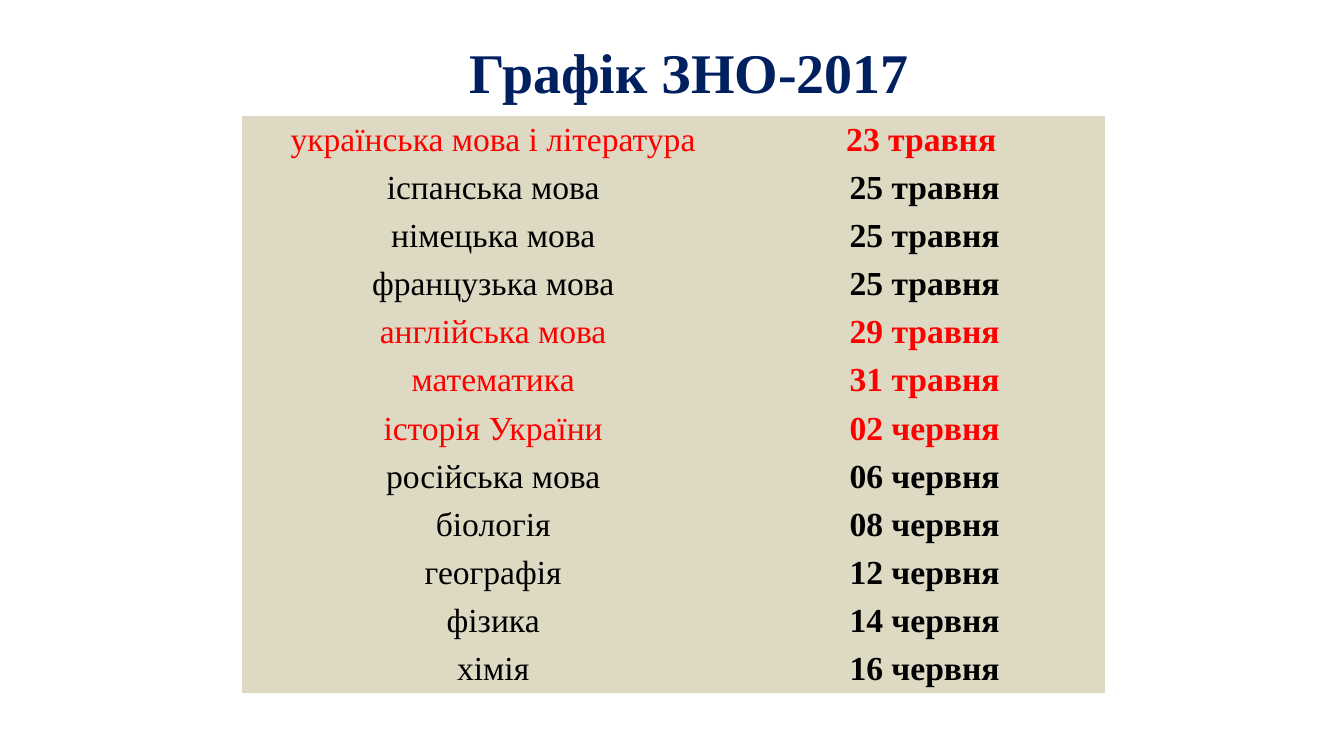
from dataclasses import dataclass

from pptx import Presentation
from pptx.dml.color import RGBColor
from pptx.enum.text import MSO_ANCHOR, PP_ALIGN
from pptx.oxml.ns import qn
from pptx.util import Inches, Pt

CENTER = PP_ALIGN.CENTER
TOP = MSO_ANCHOR.TOP
PLAIN_STYLE = "{2D5ABB26-0587-4C30-8999-92F81FD0307C}"  # no style, no grid


@dataclass(frozen=True)
class Theme:
    font: str = "Times New Roman"
    navy: RGBColor = RGBColor(0x00, 0x20, 0x60)
    red: RGBColor = RGBColor(0xFF, 0x00, 0x00)
    black: RGBColor = RGBColor(0x00, 0x00, 0x00)
    sand: RGBColor = RGBColor(0xDD, 0xD9, 0xC3)
    head: int = 30
    body: int = 18


THEME = Theme()

# Subject, date, marked in red; all dates but the first have a fixed space
EXAMS = [
    ("українська мова і література", "23 травня", True),
    ("іспанська мова", "25 травня", False),
    ("німецька мова", "25 травня", False),
    ("французька мова", "25 травня", False),
    ("англійська мова", "29 травня", True),
    ("математика", "31 травня", True),
    ("історія України", "02 червня", True),
    ("російська мова", "06 червня", False),
    ("біологія", "08 червня", False),
    ("географія", "12 червня", False),
    ("фізика", "14 червня", False),
    ("хімія", "16 червня", False),
]


def write(frame, text, size, color, bold, indent=0.15):
    """Set one centred line with a first-line indent."""
    frame.text = text
    line = frame.paragraphs[0]
    line.alignment = CENTER
    props = line._p.get_or_add_pPr()
    props.set("marL", "0")
    props.set("indent", str(Inches(indent)))
    font = line.runs[0].font
    font.name = THEME.font
    font.size = Pt(size)
    font.bold = bold
    font.color.rgb = color
    return line


def add_title(slide, left, top, width, height):
    box = slide.shapes.add_textbox(
        Inches(left), Inches(top), Inches(width), Inches(height))
    frame = box.text_frame
    frame.word_wrap = True
    frame.vertical_anchor = TOP
    frame.margin_top = Inches(0.05)
    write(frame, "Графік ЗНО-2017", THEME.head, THEME.navy, True)


def fill_cell(cell, text, color, bold, indent):
    cell.fill.solid()
    cell.fill.fore_color.rgb = THEME.sand
    cell.margin_left = cell.margin_right = 0
    cell.margin_top = cell.margin_bottom = 0
    line = write(cell.text_frame, text, THEME.body, color, bold, indent)
    line.line_spacing = 1.15


def add_dates(slide, left, top, width, height):
    frame = slide.shapes.add_table(
        len(EXAMS), 2, Inches(left), Inches(top), Inches(width), Inches(height))
    table = frame.table
    table.first_row = table.horz_banding = False
    table._tbl.tblPr.find(qn("a:tableStyleId")).text = PLAIN_STYLE

    # Subjects take the wider column, dates the rest
    wide = 3.59
    table.columns[0].width = Inches(wide)
    table.columns[1].width = Inches(width - wide)

    for row, (subject, date, marked) in enumerate(EXAMS):
        table.rows[row].height = Inches(height / len(EXAMS))
        color = THEME.red if marked else THEME.black
        fill_cell(table.cell(row, 0), subject, color, False, 0.15)
        fill_cell(table.cell(row, 1), date, color, True, 0.15 if row else 0.1)


def main():
    deck = Presentation()
    # Widescreen, 16 to 9
    deck.slide_width = Inches(10)
    deck.slide_height = Inches(10 * 9 / 16)
    slide = deck.slides.add_slide(deck.slide_layouts[6])
    add_dates(slide, 1.8, 0.86, 6.42, 4.3)
    add_title(slide, 1.95, 0.23, 6.21, 0.91)
    deck.save("out.pptx")


if __name__ == "__main__":
    main()
